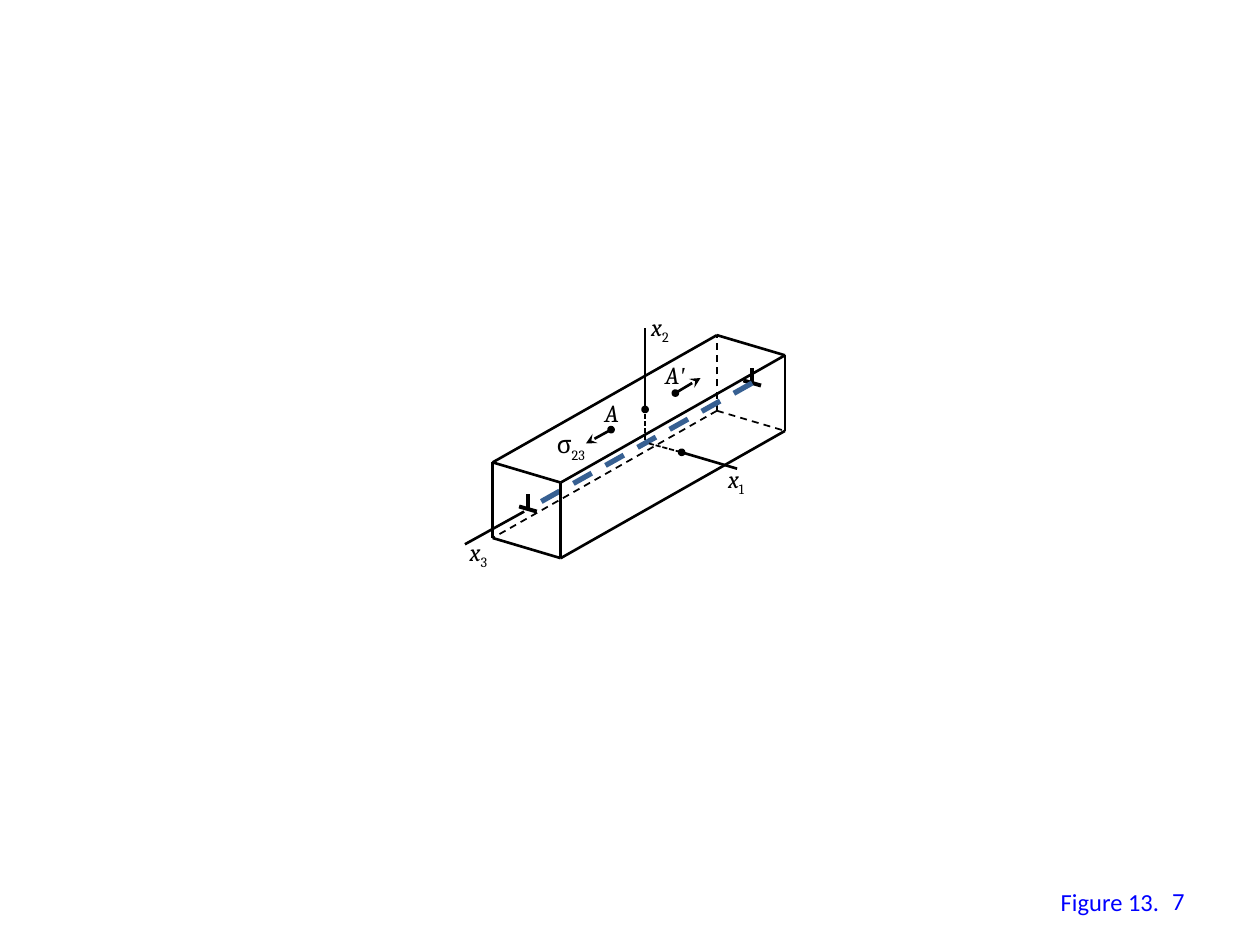
from dataclasses import dataclass

from lxml.etree import SubElement
from pptx import Presentation
from pptx.dml.color import RGBColor
from pptx.enum.dml import MSO_LINE
from pptx.enum.shapes import MSO_CONNECTOR, MSO_SHAPE
from pptx.enum.text import MSO_ANCHOR, MSO_AUTO_SIZE, PP_ALIGN
from pptx.oxml.ns import qn
from pptx.util import Inches, Pt


@dataclass(frozen=True)
class Theme:
    ink: RGBColor = RGBColor(0x00, 0x00, 0x00)
    core: RGBColor = RGBColor(0x37, 0x60, 0x92)
    caption: RGBColor = RGBColor(0x00, 0x00, 0xFF)
    math_font: str = "Cambria"
    prime_font: str = "Times New Roman"
    caption_font: str = "Calibri"
    size: float = 14
    hidden: float = 1
    edge: float = 1.5
    symbol: float = 2.25
    core_line: float = 3


@dataclass(frozen=True)
class Box:
    left: float
    top: float
    width: float
    height: float

    def at(self, point):
        return self.left + point[0], self.top + point[1]


THEME = Theme()


def add(*vectors):
    return tuple(sum(parts) for parts in zip(*vectors))


def draw_line(shapes, start, end, width=THEME.edge, color=THEME.ink, dash=None, arrow=False):
    line = shapes.add_connector(MSO_CONNECTOR.STRAIGHT, *map(Inches, (*start, *end)))
    line.line.color.rgb = color
    line.line.width = Pt(width)
    if dash:
        line.line.dash_style = dash
    if arrow:
        SubElement(line.line._get_or_add_ln(), qn("a:tailEnd"), type="stealth")
    SubElement(line._element.spPr, qn("a:effectLst"))


def draw_dot(shapes, center, diameter=0.04):
    corner = add(center, (-diameter / 2, -diameter / 2))
    dot = shapes.add_shape(MSO_SHAPE.OVAL, *map(Inches, (*corner, diameter, diameter)))
    dot.shadow.inherit = False
    dot.fill.solid()
    dot.fill.fore_color.rgb = THEME.ink
    dot.line.color.rgb = THEME.ink
    dot.line.width = Pt(THEME.edge)


def write(shapes, box, text, sub="", prime="", font=THEME.math_font, color=THEME.ink,
          italic=False, wrap=False, align=PP_ALIGN.LEFT, anchor=MSO_ANCHOR.TOP):
    area = shapes.add_textbox(*map(Inches, (box.left, box.top, box.width, box.height)))
    frame = area.text_frame
    frame.word_wrap = wrap
    frame.auto_size = MSO_AUTO_SIZE.NONE if wrap else MSO_AUTO_SIZE.SHAPE_TO_FIT_TEXT
    frame.vertical_anchor = anchor
    line = frame.paragraphs[0]
    line.alignment = align
    pieces = [(text, font, italic), (prime, THEME.prime_font, italic), (sub, font, False)]
    for content, face, slanted in pieces:
        if content:
            run = line.add_run()
            run.text = content
            run.font.name = face
            run.font.size = Pt(THEME.size)
            run.font.color.rgb = color
            run.font.italic = slanted
            if content == sub:
                run.font._element.set("baseline", "-25000")


def draw_dislocation(shapes, foot):
    symbol = shapes.add_group_shape().shapes
    draw_line(symbol, add(foot, (0.07, 0.02)), add(foot, (-0.07, -0.02)), THEME.symbol)
    draw_line(symbol, foot, add(foot, (0, -0.12)), THEME.symbol)


def draw_prism(shapes, box):
    across, down, depth = (0.54, 0.16), (0, 0.6), (1.78, -1.01)
    front_top_left = box.at((0.31, 1.27))
    front_top_right = add(front_top_left, across)
    front_bottom_left = add(front_top_left, down)
    front_bottom_right = add(front_top_right, down)
    back_top_left, back_top_right, back_bottom_left, back_bottom_right = (
        add(corner, depth) for corner in
        (front_top_left, front_top_right, front_bottom_left, front_bottom_right))

    # Hidden edges meet at the back bottom left corner
    for corner in (front_bottom_left, back_bottom_right, back_top_left):
        draw_line(shapes, back_bottom_left, corner, THEME.hidden, dash=MSO_LINE.DASH)

    # Dislocation line with its symbol at both ends
    front_foot = box.at((0.59, 1.64))
    back_foot = add(front_foot, (1.78, -1))
    draw_dislocation(shapes, front_foot)
    draw_dislocation(shapes, back_foot)
    draw_line(shapes, back_foot, front_foot, THEME.core_line, THEME.core, MSO_LINE.DASH)

    # Visible edges
    for start, end in (
        (back_top_left, front_top_left),
        (back_top_right, front_top_right),
        (back_bottom_right, front_bottom_right),
        (front_bottom_left, front_top_left),
        (front_bottom_right, front_top_right),
        (back_bottom_right, back_top_right),
        (front_bottom_right, front_bottom_left),
        (front_top_right, front_top_left),
        (back_top_left, back_top_right),
    ):
        draw_line(shapes, start, end)


def draw_axes(shapes, box):
    x1_exit, x2_exit = (1.81, 1.19), (1.52, 0.85)
    for start, end in ((x1_exit, (2.25, 1.32)), (x2_exit, (1.52, 0.2)),
                       ((0.56, 1.66), (0.09, 1.92))):
        draw_line(shapes, box.at(start), box.at(end))
    # Parts of the axes inside the prism
    for start, end in (((1.55, 1.12), x1_exit), ((1.52, 1.09), (1.52, 0.88))):
        draw_line(shapes, box.at(start), box.at(end), THEME.hidden, dash=MSO_LINE.SQUARE_DOT)
    for exit_point in (x1_exit, x2_exit):
        draw_dot(shapes, box.at(exit_point))
    for number, corner in (("1", (2.08, 1.23)), ("2", (1.47, 0.03)), ("3", (0.03, 1.81))):
        write(shapes, Box(*box.at(corner), 0.4, 0.34), "x", sub=number, italic=True)


def draw_stresses(shapes, box):
    for point, tip in (((1.25, 1.01), (1.05, 1.12)), ((1.76, 0.72), (1.96, 0.6))):
        draw_dot(shapes, box.at(point))
        draw_line(shapes, box.at(point), box.at(tip), arrow=True)
    write(shapes, Box(*box.at((0.72, 0.96)), 0.44, 0.34), "σ", sub="23")
    write(shapes, Box(*box.at((1.1, 0.71)), 0.37, 0.34), "A", italic=True)
    write(shapes, Box(*box.at((1.58, 0.41)), 0.42, 0.34), "A", prime="'", italic=True)


def draw_caption(shapes, box):
    style = {"font": THEME.caption_font, "color": THEME.caption}
    write(shapes, Box(*box.at((1.15, 0.04)), 0.99, 0.34), "Figure 13.", **style)
    write(shapes, box, "7", wrap=True, align=PP_ALIGN.RIGHT, anchor=MSO_ANCHOR.MIDDLE, **style)


def main():
    deck = Presentation()
    deck.slide_width, deck.slide_height = Inches(10), Inches(7.5)
    shapes = deck.slides.add_slide(deck.slide_layouts[6]).shapes
    diagram = Box(3.6, 2.4, 2.7, 2.2)
    draw_prism(shapes, diagram)
    draw_axes(shapes, diagram)
    draw_stresses(shapes, diagram)
    draw_caption(shapes, Box(7.17, 6.95, 2.33, 0.4))
    deck.save("out.pptx")


if __name__ == "__main__":
    main()
